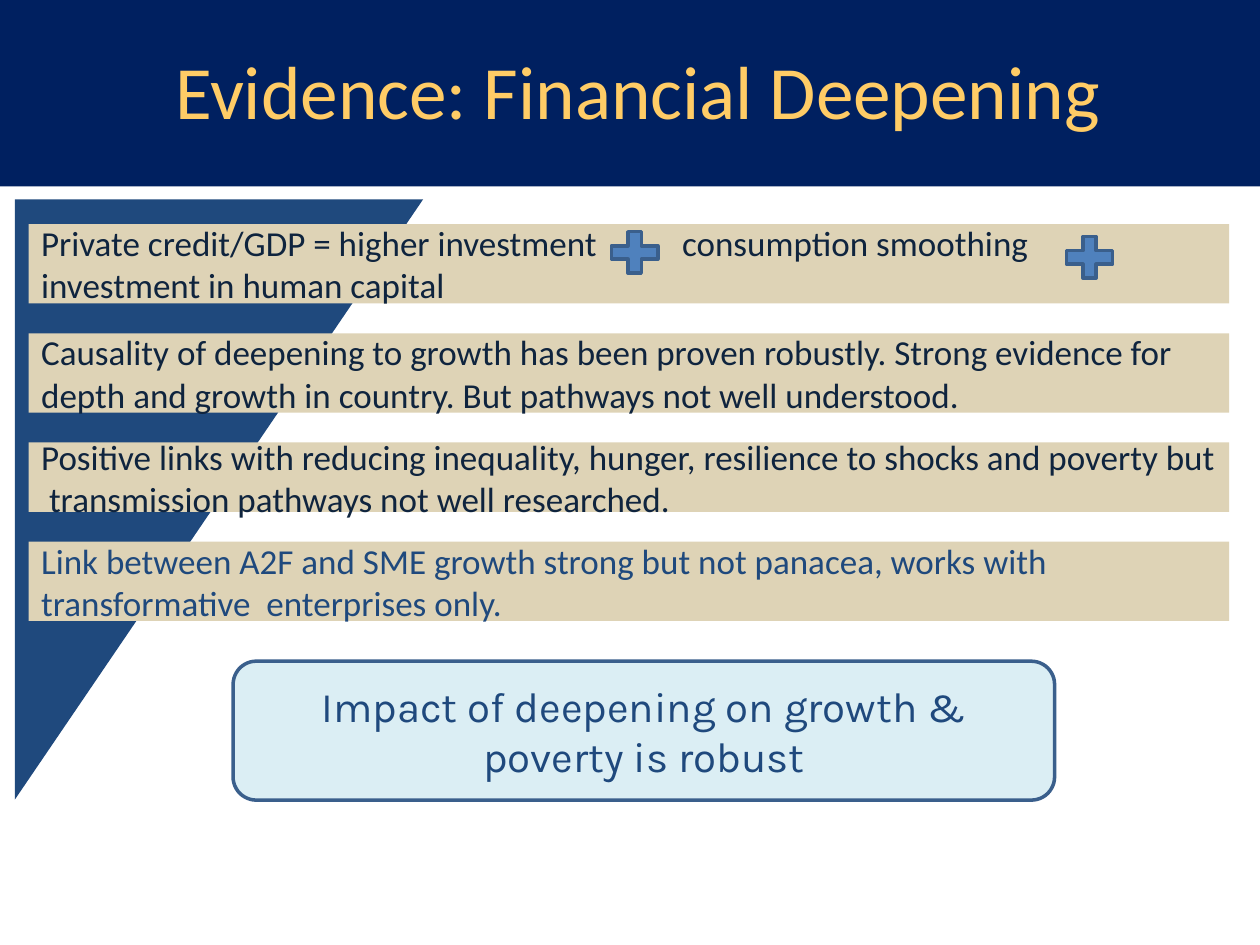
from dataclasses import dataclass

from lxml import etree
from pptx import Presentation
from pptx.dml.color import RGBColor
from pptx.enum.shapes import MSO_SHAPE
from pptx.enum.text import MSO_ANCHOR, PP_ALIGN
from pptx.oxml.ns import qn
from pptx.util import Cm, Pt


@dataclass(frozen=True)
class Theme:
    band: str = "002060"
    title: str = "FFCC66"
    navy: str = "1F497D"
    ink: str = "0F243E"
    sand: str = "DED3B6"
    pale: str = "DBEEF4"
    blue: str = "4F81BD"
    outline: str = "3A5F8C"
    font: str = "Calibri"
    accent_font: str = "Karla"
    title_size: int = 43
    row_size: int = 20
    callout_size: int = 24


T = Theme()

# Row height in cm, text colour, lines
ROWS = [
    (1.6, T.ink, ["Private credit/GDP = higher investment\tconsumption smoothing",
                  "investment in human capital"]),
    (1.6, T.ink, ["Causality of deepening to growth has been proven robustly. Strong evidence for",
                  "depth and growth in country. But pathways not well understood."]),
    (1.4, T.ink, ["Positive links with reducing inequality, hunger, resilience to shocks and poverty but",
                  " transmission pathways not well researched."]),
    (1.6, T.navy, ["Link between A2F and SME growth strong but not panacea, works with",
                   "transformative  enterprises only."]),
]
ROW_GAP = 0.6
TAB_STOP = 12.92


def paint(sp, fill, line=None):
    sp.shadow.inherit = False
    sp.fill.solid()
    sp.fill.fore_color.rgb = RGBColor.from_string(fill)
    if line:
        sp.line.color.rgb = RGBColor.from_string(line)
        sp.line.width = Pt(2)
    else:
        sp.line.fill.background()


def add_box(s, kind, x, y, w, h, fill, line=None):
    sp = s.shapes.add_shape(kind, Cm(x), Cm(y), Cm(w), Cm(h))
    paint(sp, fill, line)
    return sp


def write(sp, lines, font, size, color, align):
    tf = sp.text_frame
    tf.word_wrap = True
    tf.vertical_anchor = MSO_ANCHOR.MIDDLE
    tf.text = "\n".join(lines)
    for p in tf.paragraphs:
        p.alignment = align
        p.font.name = font
        p.font.size = Pt(size)
        p.font.color.rgb = RGBColor.from_string(color)
    return tf


def add_tab_stop(p, pos):
    tabs = etree.Element(qn("a:tabLst"))
    etree.SubElement(tabs, qn("a:tab"), pos=str(Cm(pos)), algn="l")
    # Tab stops come before the default run properties
    p.font
    pPr = p._p.get_or_add_pPr()
    pPr.insert(list(pPr).index(pPr.find(qn("a:defRPr"))), tabs)


def add_header(s, x, y, w, h):
    band = add_box(s, MSO_SHAPE.RECTANGLE, x, y, w, h, T.band)
    s.shapes._spTree.insert(2, band._element)  # behind the title
    title = s.shapes.title
    title.left, title.top = Cm(x + 1.42), Cm(y + 0.33)
    title.width, title.height = Cm(22.86), Cm(2.95)
    write(title, ["Evidence: Financial Deepening"], T.font, T.title_size, T.title,
          PP_ALIGN.CENTER)


def add_wedge(s, x, y, w, h):
    builder = s.shapes.build_freeform(Cm(x), Cm(y))
    builder.add_line_segments([(Cm(x + w), Cm(y)), (Cm(x), Cm(y + h))], close=True)
    paint(builder.convert_to_shape(), T.navy)


def add_rows(s, x, y, w):
    top = y
    for h, color, lines in ROWS:
        sp = add_box(s, MSO_SHAPE.RECTANGLE, x, top, w, h, T.sand)
        tf = write(sp, lines, T.font, T.row_size, color, PP_ALIGN.LEFT)
        tf.margin_right = 0
        for p in tf.paragraphs:
            if "\t" in p.text:
                add_tab_stop(p, TAB_STOP)
        top += h + ROW_GAP
    # Plus signs between the terms of the first row
    for dx, dy in [(11.58, 0), (20.75, 0.1)]:
        add_box(s, MSO_SHAPE.MATH_PLUS, x + dx, y + dy, 1.27, 1.14, T.blue, T.outline)


def add_callout(s, x, y, w, h):
    sp = add_box(s, MSO_SHAPE.ROUNDED_RECTANGLE, x, y, w, h, T.pale, T.outline)
    write(sp, ["Impact of deepening on growth & poverty is robust"], T.accent_font,
          T.callout_size, T.navy, PP_ALIGN.CENTER)


def main():
    prs = Presentation()
    prs.slide_width, prs.slide_height = Cm(25.4), Cm(19.05)
    s = prs.slides.add_slide(prs.slide_layouts[5])
    add_header(s, 0, 0, 25.4, 3.76)
    add_wedge(s, 0.3, 4.02, 8.23, 12.1)
    add_rows(s, 0.58, 4.52, 24.2)
    add_callout(s, 4.7, 13.33, 16.56, 2.8)
    prs.save("out.pptx")


if __name__ == "__main__":
    main()
